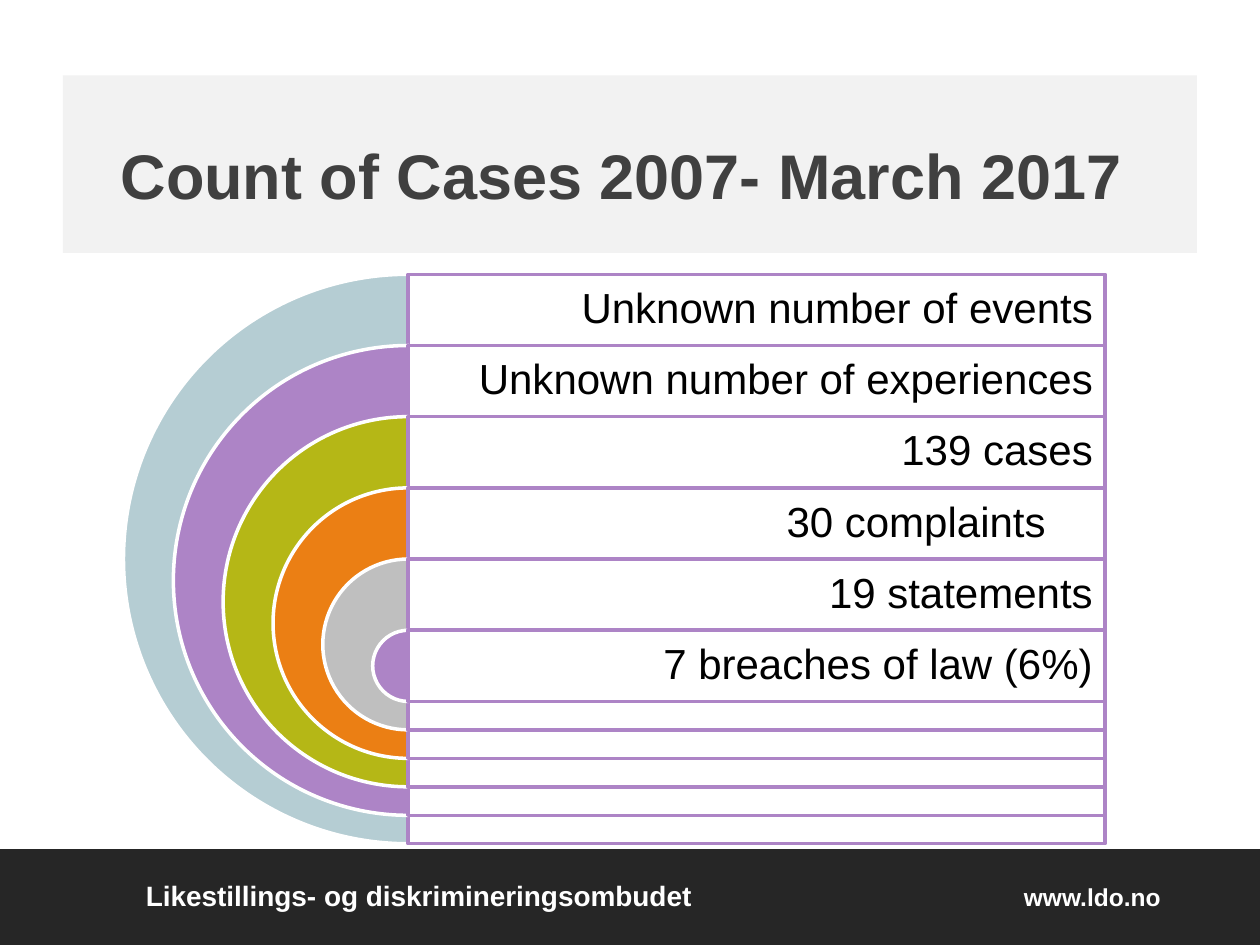
from dataclasses import dataclass

from lxml import etree
from pptx import Presentation
from pptx.dml.color import RGBColor
from pptx.enum import shapes, text
from pptx.oxml import ns
from pptx.util import Cm, Pt


@dataclass(frozen=True)
class Theme:
    font: str = "Arial"
    dark: str = "262626"
    pale: str = "F2F2F2"
    title: str = "404040"
    white: str = "FFFFFF"
    black: str = "000000"
    edge: str = "AD84C6"
    rings: tuple = ("B5CDD3", "AD84C6", "B5B716", "EB7F14", "BFBFBF", "AD84C6")
    big: int = 36
    body: int = 24
    foot: int = 16
    small: int = 14


THEME = Theme()
LABELS = (
    "Unknown number of events",
    "Unknown number of experiences",
    "139 cases",
    "30 complaints",
    "19 statements",
    "7 breaches of law (6%)",
)
INDENTED = "30 complaints"


def add_sub(parent, tag, **attrs):
    return etree.SubElement(parent, ns.qn(tag), attrs)


def add_shape(slide, kind, box, fill, line=None, alpha=None):
    shape = slide.shapes.add_shape(kind, *map(Cm, box))
    shape.shadow.inherit = False
    shape.fill.solid()
    shape.fill.fore_color.rgb = RGBColor.from_string(fill)
    if alpha:
        color = shape.fill._xPr.find(".//" + ns.qn("a:srgbClr"))
        add_sub(color, "a:alpha", val=str(alpha * 1000))
    if line:
        shape.line.color.rgb = RGBColor.from_string(line)
        shape.line.width = Pt(2)
    else:
        shape.line.fill.background()
    return shape


def add_text(slide, box, *runs, color=THEME.black, bold=False, align="LEFT",
             anchor="MIDDLE", pads=(0.25, 0.13, 0.25, 0.13), space=None, tab=None):
    """Place one paragraph made of (words, size) runs."""
    frame = slide.shapes.add_textbox(*map(Cm, box)).text_frame
    frame.word_wrap = True
    frame.vertical_anchor = text.MSO_ANCHOR[anchor]
    (frame.margin_left, frame.margin_top,
     frame.margin_right, frame.margin_bottom) = map(Cm, pads)
    para = frame.paragraphs[0]
    para.alignment = text.PP_ALIGN[align]
    if space:
        para.line_spacing = space
    if tab:
        stops = add_sub(para._p.get_or_add_pPr(), "a:tabLst")
        add_sub(stops, "a:tab", pos=str(Cm(tab)), algn="r")
    for words, size in runs:
        run = para.add_run()
        run.text = words
        font = run.font
        font.name, font.size, font.bold = THEME.font, Pt(size), bold
        font.color.rgb = RGBColor.from_string(color)


def add_footer(slide, box):
    left, top, width, _ = box
    add_shape(slide, shapes.MSO_SHAPE.RECTANGLE, box, THEME.dark)
    add_text(slide, (left + 2.69, top + 0.46, width - 4.19, 0.94),
             ("Likestillings- og diskrimineringsombudet", THEME.foot),
             ("\twww.ldo.no", THEME.small),
             color=THEME.white, bold=True, anchor="TOP", tab=20.46)


def add_title(slide, box):
    left, top, width, height = box
    add_shape(slide, shapes.MSO_SHAPE.RECTANGLE, box, THEME.pale)
    # The wider right pad sets the title slightly left of centre
    add_text(slide, (left, top + 0.41, width, height - 0.41),
             ("Count of Cases 2007- March 2017", THEME.big),
             color=THEME.title, bold=True, align="CENTER",
             pads=(0.25, 0.13, 0.6, 0.13))


def add_target(slide, box):
    """Nested half rings, each with a panel and a label."""
    left, top, width, size = box
    mid = left + size / 2
    row = size / 8
    step = (size - row) / (len(LABELS) - 1)
    for i, (label, fill) in enumerate(zip(LABELS, THEME.rings)):
        y, side = top + i * row, size - i * step
        wide = left + width - mid
        ring = add_shape(slide, shapes.MSO_SHAPE.PIE,
                         (mid - side / 2, y, side, side), fill, THEME.white)
        # Left half: from 90 to 270 degrees
        ring.adjustments[0], ring.adjustments[1] = 54, 162
        add_shape(slide, shapes.MSO_SHAPE.RECTANGLE, (mid, y, wide, side),
                  THEME.white, THEME.edge, alpha=90)
        right = 1.2 if label == INDENTED else 0.25
        add_text(slide, (mid, y, wide, row), (label, THEME.body),
                 align="RIGHT", pads=(0.25, 0.25, right, 0.25), space=0.9)


def main():
    deck = Presentation()
    deck.slide_width, deck.slide_height = Cm(25.4), Cm(19.05)
    slide = deck.slides.add_slide(deck.slide_layouts[6])
    add_footer(slide, (0, 17.12, 25.4, 1.93))
    add_title(slide, (1.27, 1.52, 22.86, 3.58))
    add_target(slide, (2.49, 5.53, 19.79, 11.48))
    deck.save("out.pptx")


if __name__ == "__main__":
    main()
